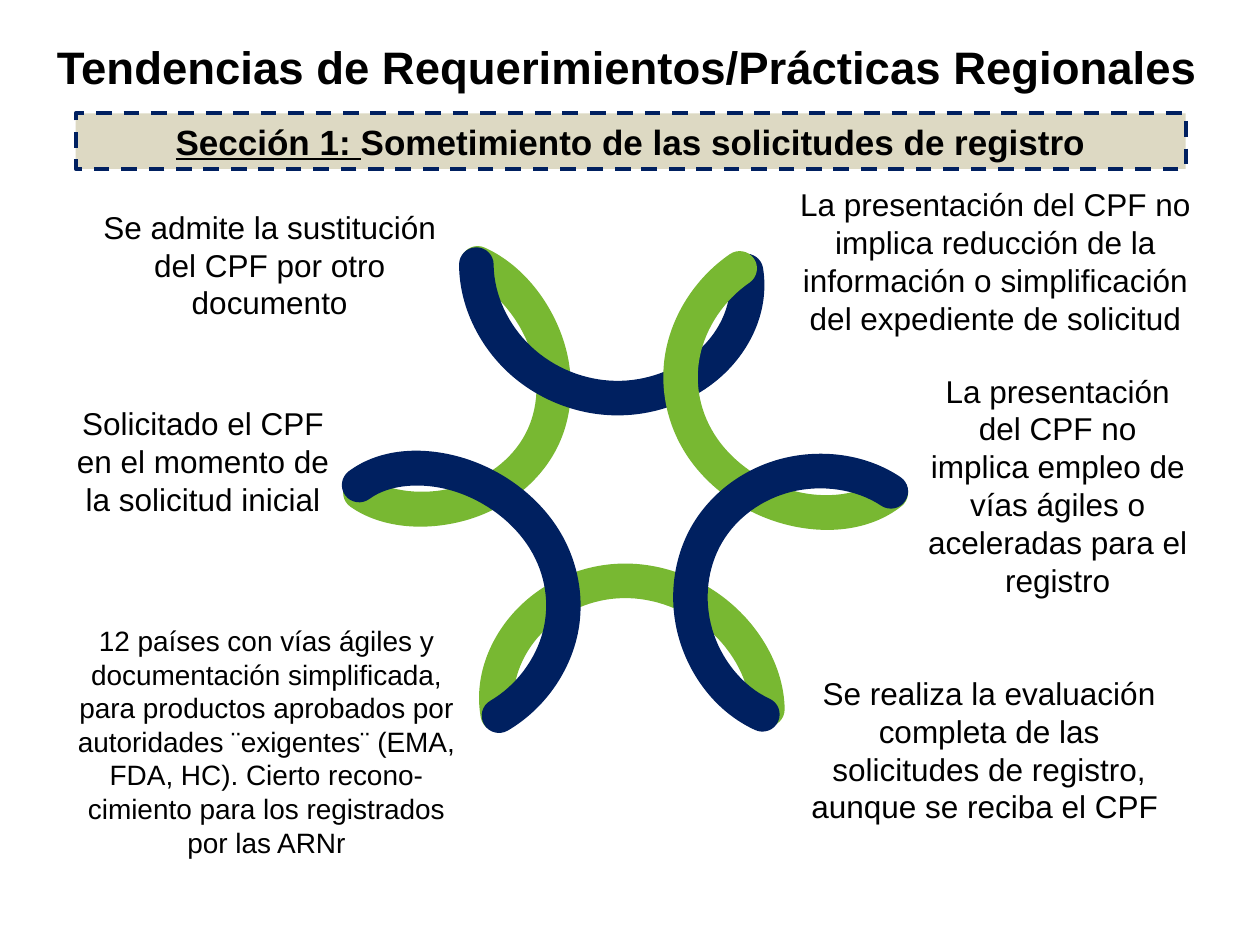
from dataclasses import dataclass
from math import cos, radians, sin

from lxml import etree
from pptx import Presentation
from pptx.dml.color import RGBColor
from pptx.enum.dml import MSO_LINE
from pptx.enum.shapes import MSO_SHAPE
from pptx.enum.text import MSO_ANCHOR, MSO_AUTO_SIZE, PP_ALIGN
from pptx.oxml.ns import qn
from pptx.util import Inches, Pt

CENTER = PP_ALIGN.CENTER
MIDDLE = MSO_ANCHOR.MIDDLE
RECTANGLE = MSO_SHAPE.RECTANGLE
DASH = MSO_LINE.DASH
GROW = MSO_AUTO_SIZE.SHAPE_TO_FIT_TEXT

HALF_WIDTH = 0.137
TURN = 120
QUARTER = 0.5523


@dataclass(frozen=True)
class Theme:
    """Colours, font and type sizes of the slide."""
    font: str = "Arial"
    text: RGBColor = RGBColor(0x00, 0x00, 0x00)
    green: RGBColor = RGBColor(0x78, 0xB8, 0x32)
    navy: RGBColor = RGBColor(0x00, 0x20, 0x60)
    sand: RGBColor = RGBColor(0xDD, 0xD9, 0xC3)
    title: int = 26
    section: int = 20
    body: int = 18
    small: int = 16


THEME = Theme()

LINKS = [
    (THEME.green, (2.61, 2.54, 2.32, 1.42),
     [3.79 + 2.09j, 4.33 + 2.71j, 4.29 + 3.51j, 3.65 + 4j, 2.86 + 3.91j]),
    (THEME.navy, (3.76, 1.29, 1.98, 2.31),
     [3.78 + 2.1j, 4.12 + 2.85j, 4.88 + 3.16j, 5.64 + 2.88j, 5.92 + 2.15j]),
    (THEME.green, (4.1, 4.2, 2.01, 2.28),
     [3.95 + 5.67j, 4.2 + 4.93j, 4.94 + 4.61j, 5.72 + 4.9j, 6.09 + 5.63j]),
    (THEME.navy, (2.68, 3.41, 1.84, 2.31),
     [2.85 + 3.85j, 3.65 + 3.77j, 4.32 + 4.28j, 4.44 + 5.05j, 3.96 + 5.68j]),
    (THEME.green, (5.27, 2.13, 1.94, 2.33),
     [5.87 + 2.13j, 5.42 + 2.8j, 5.58 + 3.56j, 6.27 + 4.03j, 7.07 + 3.91j]),
    (THEME.navy, (4.93, 3.83, 2.31, 1.37),
     [7.07 + 3.9j, 6.25 + 3.77j, 5.61 + 4.24j, 5.52 + 5.03j, 6.05 + 5.67j]),
]

NOTES = [
    ((0.48, 4.9, 3.27, 1.99), THEME.small,
     "12 países con vías ágiles y documentación simplificada, para productos "
     "aprobados por autoridades ¨exigentes¨ (EMA, FDA, HC). Cierto "
     "recono-cimiento para los registrados por las ARNr"),
    ((6.28, 5.3, 3.14, 1.31), THEME.body,
     "Se realiza la evaluación completa de las solicitudes de registro, "
     "aunque se reciba el CPF "),
    ((0.47, 3.16, 2.28, 1.01), THEME.body,
     "Solicitado el CPF en el momento de la solicitud inicial"),
    ((0.6, 1.6, 3.08, 1.01), THEME.body,
     "Se admite la sustitución del CPF por otro documento"),
    ((6.2, 1.42, 3.4, 1.31), THEME.body,
     "La presentación del CPF no implica reducción de la información o "
     "simplificación del expediente de solicitud"),
    ((7.26, 2.9, 2.27, 1.92), THEME.body,
     "La presentación del CPF no implica empleo de vías ágiles o aceleradas "
     "para el registro"),
]


def curve_point(knots, t):
    """Return the point at t on the polynomial through evenly timed knots."""
    total = 0
    for i, knot in enumerate(knots):
        for j in range(len(knots)):
            if j != i:
                knot *= (t - j) / (i - j)
        total += knot
    return total


def slope(curve, t):
    """Return the derivative of a curve at t."""
    return (curve(t + 0.01) - curve(t - 0.01)) / 0.02


def band_curves(knots):
    """Return the start and the cubic curves of a round-ended band."""
    def middle(t):
        return curve_point(knots, t)

    def normal(t):
        d = slope(middle, t)
        return 1j * d / abs(d) * HALF_WIDTH

    last = len(knots) - 1
    curves = []
    for side, first, step in ((1, 0, 1), (-1, last, -1)):
        def edge(t):
            return middle(t) + side * normal(t)

        for t in range(first, first + step * last, step):
            end = t + step
            curves.append((edge(t) + step * slope(edge, t) / 3,
                           edge(end) - step * slope(edge, end) / 3, edge(end)))
        out = side * normal(end)
        for _ in range(2):
            ahead = -1j * out
            curves.append((middle(end) + out + QUARTER * ahead,
                           middle(end) + ahead + QUARTER * out, middle(end) + ahead))
            out = ahead
    return middle(0) + normal(0), curves


class SlideBuilder:
    """Holds the theme and the current slide."""

    def __init__(self, prs, theme):
        self.theme = theme
        self.s = prs.slides.add_slide(prs.slide_layouts[5])

    def format_text(self, tf, size, bold=False):
        """Centre the text and apply the theme font."""
        tf.word_wrap = True
        for p in tf.paragraphs:
            p.alignment = CENTER
            for r in p.runs:
                r.font.name = self.theme.font
                r.font.size = Pt(size)
                r.font.bold = bold
                r.font.color.rgb = self.theme.text

    def title(self, box, text):
        """Place and fill the title placeholder."""
        sp = self.s.shapes.title
        sp.left, sp.top, sp.width, sp.height = map(Inches, box)
        sp.text_frame.text = text
        sp.text_frame.vertical_anchor = MIDDLE
        self.format_text(sp.text_frame, self.theme.title, bold=True)

    def section(self, box, label, text):
        """Add the dashed banner with an underlined label."""
        sp = self.s.shapes.add_shape(RECTANGLE, *map(Inches, box))
        sp.shadow.inherit = False
        sp.fill.solid()
        sp.fill.fore_color.rgb = self.theme.sand
        sp.line.color.rgb = self.theme.navy
        sp.line.width = Pt(2.25)
        sp.line.dash_style = DASH
        sp.text_frame.auto_size = GROW
        p = sp.text_frame.paragraphs[0]
        for part in (label, text):
            p.add_run().text = part
        p.runs[0].font.underline = True
        self.format_text(sp.text_frame, self.theme.section, bold=True)

    def note(self, box, size, text):
        """Add a centred text box."""
        sp = self.s.shapes.add_textbox(*map(Inches, box))
        sp.text_frame.text = text
        sp.text_frame.auto_size = GROW
        self.format_text(sp.text_frame, size)

    def link(self, color, box, knots):
        """Add one curved link of the chain in its turned frame."""
        left, top, width, height = box
        half = complex(width, height) / 2
        unturn = complex(cos(radians(TURN)), -sin(radians(TURN)))

        def local(point):
            q = (point - complex(left, top) - half) * unturn + half
            return Inches(q.real), Inches(q.imag)

        start, curves = band_curves(knots)
        builder = self.s.shapes.build_freeform(*local(start))
        builder.add_line_segments([local(c[-1]) for c in curves], close=True)
        sp = builder.convert_to_shape()
        sp.left, sp.top, sp.width, sp.height = map(Inches, box)
        sp.rotation = TURN
        sp.shadow.inherit = False
        sp.fill.solid()
        sp.fill.fore_color.rgb = color
        sp.line.fill.background()

        outline = next(sp._element.iter(qn("a:path")))
        for child in list(outline):
            outline.remove(child)
        outline.set("w", str(Inches(width)))
        outline.set("h", str(Inches(height)))
        for tag, points in [("a:moveTo", [start])] + [("a:cubicBezTo", c) for c in curves]:
            command = etree.SubElement(outline, qn(tag))
            for x, y in map(local, points):
                etree.SubElement(command, qn("a:pt"), x=str(x), y=str(y))
        etree.SubElement(outline, qn("a:close"))


def main():
    """Build the slide and save it."""
    prs = Presentation()
    prs.slide_width, prs.slide_height = Inches(10), Inches(7.5)
    slide = SlideBuilder(prs, THEME)
    for link in LINKS:
        slide.link(*link)
    for note in NOTES:
        slide.note(*note)
    slide.section((0.6, 0.9, 8.81, 0.44), "Sección 1: ",
                  "Sometimiento de las solicitudes de registro")
    slide.title((-0.02, 0.3, 10, 0.45), "Tendencias de Requerimientos/Prácticas Regionales")
    prs.save("out.pptx")


if __name__ == "__main__":
    main()
